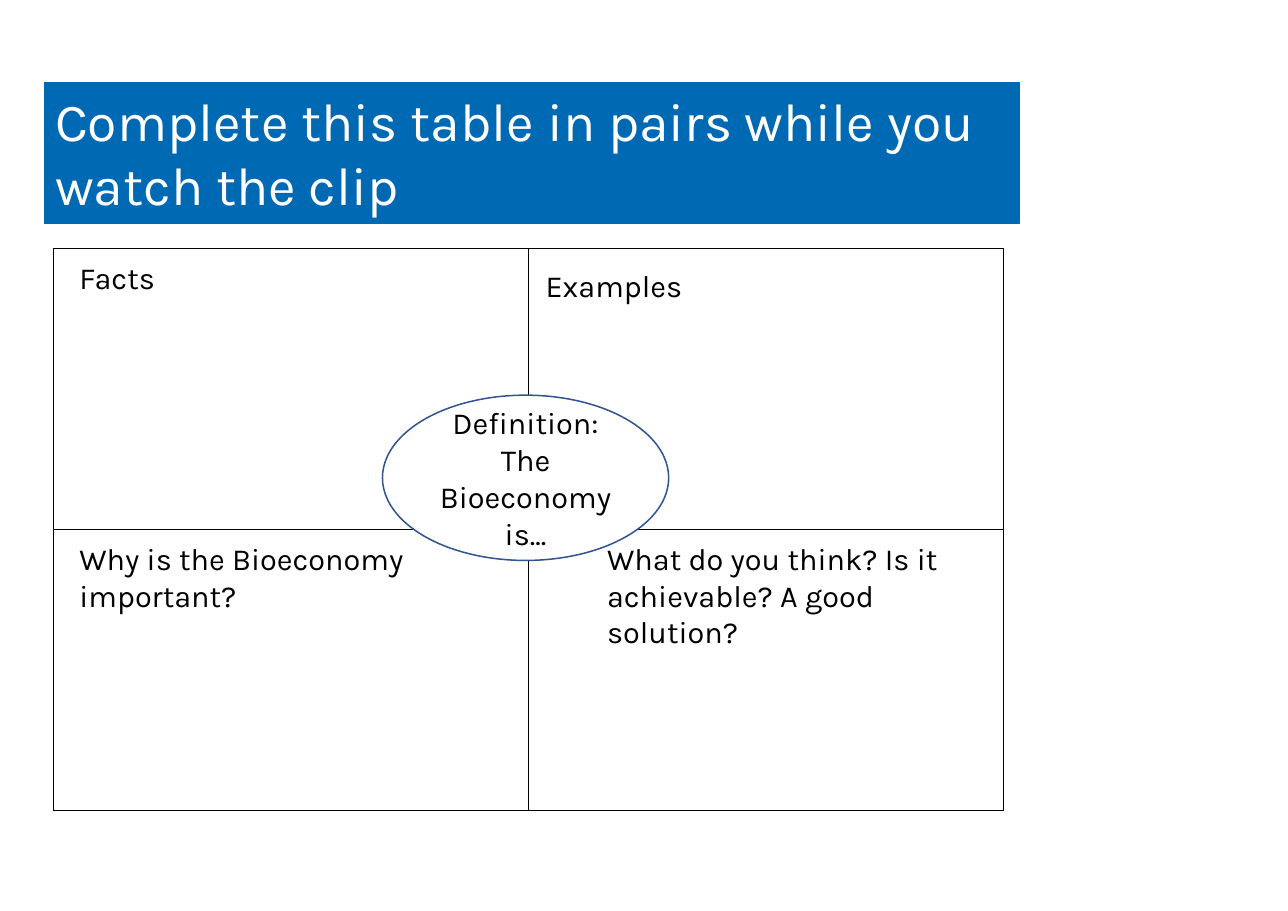
import pptx
import pptx.util
import pptx.dml.color
import pptx.enum.shapes
import pptx.enum.text
import pptx.oxml
import pptx.oxml.ns
from lxml import etree

Cm = pptx.util.Cm
Pt = pptx.util.Pt
RGBColor = pptx.dml.color.RGBColor
SHAPES = pptx.enum.shapes.MSO_SHAPE
ALIGN = pptx.enum.text.PP_ALIGN
ANCHOR = pptx.enum.text.MSO_ANCHOR

BLACK = RGBColor(0x00, 0x00, 0x00)
WHITE = RGBColor(0xFF, 0xFF, 0xFF)
BANNER_BLUE = RGBColor(0x00, 0x69, 0xB3)
OUTLINE_BLUE = RGBColor(0x32, 0x54, 0x91)

# Content: places are left, top, width, height in centimetres
TITLE = "Complete this table in pairs while you watch the clip"
TITLE_PLACE = (1.02, 1.9, 22.48, 3.25)
DEFINITION = "Definition: The Bioeconomy is..."
DEFINITION_PLACE = (8.82, 9.11, 6.6, 3.81)
GRID_PLACE = (1.24, 5.73, 21.9, 12.95)
GRID_SIZE = 2
PROMPTS = [
    ("Facts", (1.58, 5.84, 7.62, 1.12)),
    ("Examples", (12.33, 6.02, 7.62, 1.12)),
    ("Why is the Bioeconomy important?", (1.58, 12.32, 8.81, 1.96)),
    ("What do you think? Is it achievable? A good solution?",
     (13.75, 12.32, 9.39, 2.83)),
]


def lengths(place):
    return [Cm(value) for value in place]


def write_text(shape, text, size=20, color=BLACK, align=ALIGN.LEFT, anchor=ANCHOR.TOP):
    frame = shape.text_frame
    frame.word_wrap = True
    frame.vertical_anchor = anchor
    para = frame.paragraphs[0]
    para.alignment = align
    span = para.add_run()
    span.text = text
    span.font.name = "Karla"
    span.font.size = Pt(size)
    span.font.color.rgb = color


def add_panel(page, kind, place, fill, line, line_width):
    panel = page.shapes.add_shape(kind, *lengths(place))
    panel.shadow.inherit = False
    panel.fill.solid()
    panel.fill.fore_color.rgb = fill
    panel.line.color.rgb = line
    panel.line.width = Pt(line_width)
    return panel


def border_cell(cell, color, width):
    properties = cell._tc.get_or_add_tcPr()
    for position, side in enumerate(("lnL", "lnR", "lnT", "lnB")):
        edge = etree.Element(pptx.oxml.ns.qn("a:" + side), w=str(Pt(width)))
        paint = etree.SubElement(edge, pptx.oxml.ns.qn("a:solidFill"))
        etree.SubElement(paint, pptx.oxml.ns.qn("a:srgbClr"), val=str(color))
        properties.insert(position, edge)


def add_grid(page):
    grid = page.shapes.add_table(GRID_SIZE, GRID_SIZE, *lengths(GRID_PLACE)).table
    grid.first_row = False
    grid.horz_banding = False
    for cell in grid.iter_cells():
        cell.fill.background()
        border_cell(cell, BLACK, 1)


def main():
    deck = pptx.Presentation()
    deck.slide_width, deck.slide_height = Cm(29.7), Cm(21)
    page = deck.slides.add_slide(deck.slide_layouts[6])

    # Answer grid with the definition in the middle
    add_grid(page)
    oval = add_panel(page, SHAPES.OVAL, DEFINITION_PLACE, WHITE, OUTLINE_BLUE, 1)
    write_text(oval, DEFINITION, align=ALIGN.CENTER, anchor=ANCHOR.MIDDLE)

    # Title banner
    banner = add_panel(page, SHAPES.RECTANGLE, TITLE_PLACE, BANNER_BLUE, BANNER_BLUE, 0.75)
    write_text(banner, TITLE, size=35, color=WHITE)

    # One prompt for each quarter
    for prompt, place in PROMPTS:
        box = page.shapes.add_textbox(*lengths(place))
        write_text(box, prompt)

    deck.save("out.pptx")


if __name__ == "__main__":
    main()
